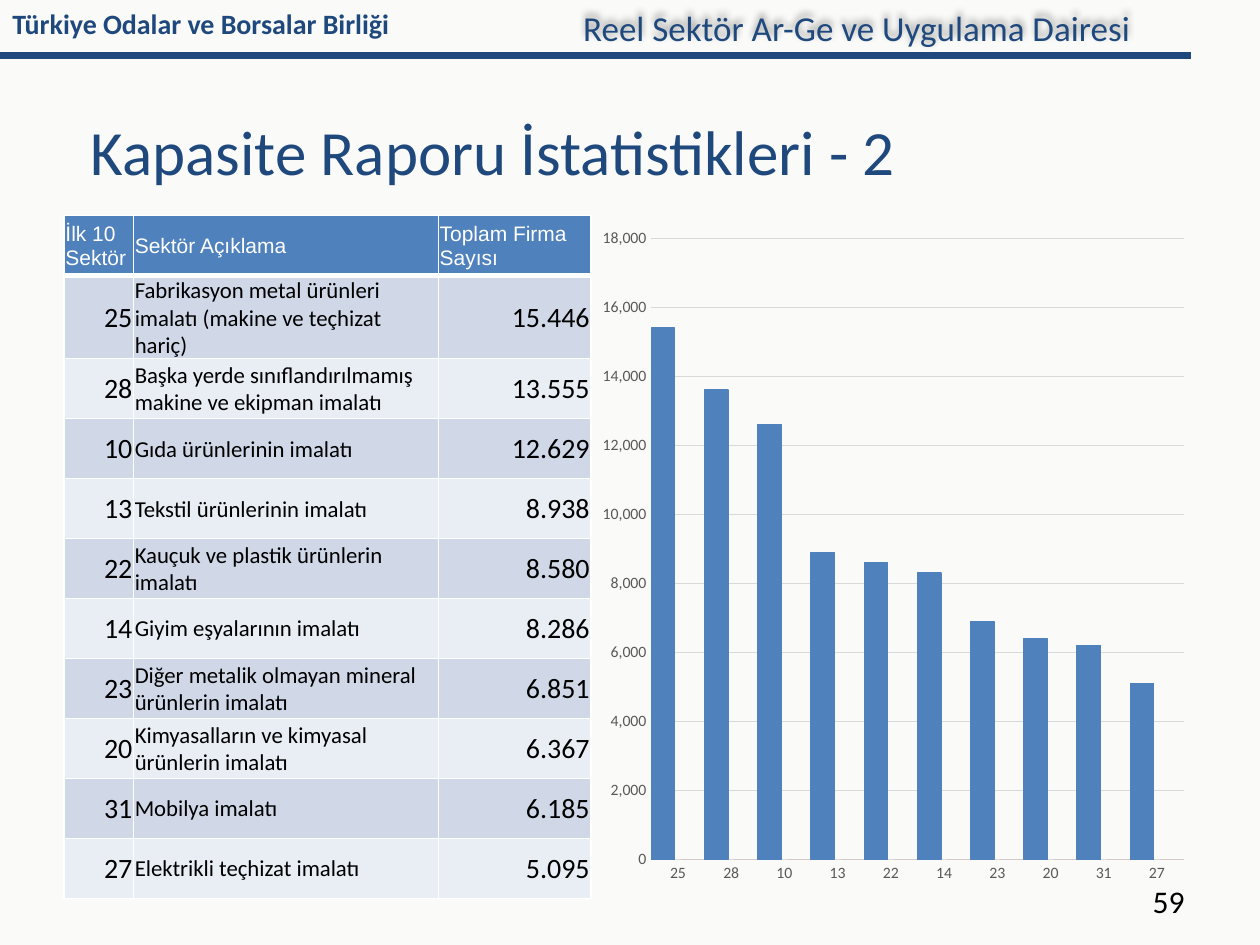
from lxml import etree
from pptx import Presentation
from pptx import util as u
from pptx.chart.data import CategoryChartData
from pptx.dml.color import RGBColor
from pptx.enum import chart as charts, shapes, text
from pptx.oxml import parse_xml
from pptx.oxml.ns import nsdecls, qn

WIDTH, HEIGHT = 10, 7.5
NAVY, BLUE, RED = "1F497D", "4F81BD", "C0504D"
BLACK, WHITE, GREY, RULE = "000000", "FFFFFF", "595959", "D9D9D9"
BANDS = ("D0D8E8", "E9EDF4")
LEFT, TOP, BODY_HEIGHT = 0.51, 1.71, 5.42
COLUMNS = (0.55, 2.42, 1.21)
TALL_ROW = 0.66
RIGHT = text.PP_ALIGN.RIGHT
MIDDLE = text.MSO_ANCHOR.MIDDLE

HEADINGS = ("İlk 10 Sektör", "Sektör Açıklama", "Toplam Firma Sayısı")
SECTORS = (
    ("25", "Fabrikasyon metal ürünleri imalatı (makine ve teçhizat hariç)", "15.446"),
    ("28", "Başka yerde sınıflandırılmamış makine ve ekipman imalatı", "13.555"),
    ("10", "Gıda ürünlerinin imalatı", "12.629"),
    ("13", "Tekstil ürünlerinin imalatı", "8.938"),
    ("22", "Kauçuk ve plastik ürünlerin imalatı", "8.580"),
    ("14", "Giyim eşyalarının imalatı", "8.286"),
    ("23", "Diğer metalik olmayan mineral ürünlerin imalatı", "6.851"),
    ("20", "Kimyasalların ve kimyasal ürünlerin imalatı", "6.367"),
    ("31", "Mobilya imalatı", "6.185"),
    ("27", "Elektrikli teçhizat imalatı", "5.095"),
)


def colour(value):
    return RGBColor.from_string(value)


def paint(fill, value):
    fill.solid()
    fill.fore_color.rgb = colour(value)


def set_all(target, **values):
    for name, value in values.items():
        setattr(target, name, value)


def style_font(font, size, value, name="Calibri", bold=False):
    set_all(font, size=u.Pt(size), name=name, bold=bold)
    font.color.rgb = colour(value)


def style_line(line, value, points):
    line.color.rgb = colour(value)
    line.width = u.Pt(points)


def write(frame, words, size, value, align=None, **font):
    para = frame.paragraphs[0]
    para.alignment = align
    span = para.add_run()
    span.text = words
    style_font(span.font, size, value, **font)


def add_text(page, place, words, size, value, anchor=None, indent=0.1, **style):
    box = page.shapes.add_textbox(*map(u.Inches, place))
    set_all(box.text_frame, word_wrap=True, vertical_anchor=anchor,
            margin_left=u.Inches(indent))
    write(box.text_frame, words, size, value, **style)
    return box


def add_soft_shadow(box):
    box._element.spPr.append(parse_xml(
        f'<a:effectLst {nsdecls("a")}><a:outerShdw blurRad="50800" dist="38100" '
        'dir="16200000"><a:srgbClr val="000000"><a:alpha val="40000"/>'
        '</a:srgbClr></a:outerShdw></a:effectLst>'))


def add_rule(page, y, end):
    rule = page.shapes.add_connector(
        shapes.MSO_CONNECTOR.STRAIGHT, 0, u.Inches(y), u.Inches(end), u.Inches(y))
    style_line(rule.line, NAVY, 4)
    etree.SubElement(rule._element.spPr, qn("a:effectLst"))


def add_borders(cell, bottom):
    properties = cell._tc.get_or_add_tcPr()
    for side, points in (("L", 1), ("R", 1), ("T", 1), ("B", bottom)):
        properties.append(parse_xml(
            f'<a:ln{side} {nsdecls("a")} w="{u.Pt(points)}"><a:solidFill>'
            f'<a:srgbClr val="{WHITE}"/></a:solidFill></a:ln{side}>'))


def fill_cell(cell, words, fill, bottom=1, **style):
    add_borders(cell, bottom)
    paint(cell.fill, fill)
    edge = u.Inches(0.01)
    set_all(cell, vertical_anchor=MIDDLE, margin_left=edge, margin_right=edge,
            margin_top=edge, margin_bottom=0)
    write(cell.text_frame, words, **style)


def add_sector_table(page):
    count = len(SECTORS) + 1
    place = (LEFT, TOP, sum(COLUMNS), BODY_HEIGHT)
    table = page.shapes.add_table(
        count, len(COLUMNS), *map(u.Inches, place)).table
    for column, width in zip(table.columns, COLUMNS):
        column.width = u.Inches(width)
    plain = (BODY_HEIGHT - TALL_ROW) / (count - 1)
    for index, row in enumerate(table.rows):
        row.height = u.Inches(TALL_ROW if index == 1 else plain)

    for column, words in enumerate(HEADINGS):
        fill_cell(table.cell(0, column), words, BLUE, bottom=3,
                  size=12, value=WHITE, name="Arial")
    for index, sector in enumerate(SECTORS):
        for column, words in enumerate(sector):
            size, align = (13, None) if column == 1 else (16, RIGHT)
            fill_cell(table.cell(index + 1, column), words, BANDS[index % 2],
                      size=size, value=BLACK, align=align)


def add_firm_chart(page):
    data = CategoryChartData(number_format="#,##0")
    data.categories = [code for code, _, _ in SECTORS]
    data.add_series("Series 1", [round(int(firms.replace(".", "")), -2)
                                 for _, _, firms in SECTORS])
    data.add_series("Series 2", [0] * len(SECTORS))
    place = (LEFT + sum(COLUMNS), TOP, 4.8, BODY_HEIGHT)
    chart = page.shapes.add_chart(
        charts.XL_CHART_TYPE.COLUMN_CLUSTERED, *map(u.Inches, place), data).chart
    set_all(chart, has_legend=False, has_title=False)
    style_font(chart.font, 10, BLACK)

    # Bars
    plot = chart.plots[0]
    set_all(plot, gap_width=0, overlap=-27, vary_by_categories=False)
    firms, second = plot.series
    paint(firms.format.fill, BLUE)
    style_line(firms.format.line, BLUE, 0.75)
    paint(second.format.fill, RED)

    # Axes
    for axis in (chart.category_axis, chart.value_axis):
        set_all(axis, major_tick_mark=charts.XL_TICK_MARK.NONE,
                minor_tick_mark=charts.XL_TICK_MARK.NONE)
        style_font(axis.tick_labels.font, 9, GREY)
    values = chart.value_axis
    set_all(values, minimum_scale=0, maximum_scale=18000, major_unit=2000)
    set_all(values.tick_labels, number_format="#,##0", number_format_is_linked=False)
    values.format.line.fill.background()
    for line in (chart.category_axis.format.line, values.major_gridlines.format.line):
        style_line(line, RULE, 0.75)

    # Plot area as shares of the chart
    area = chart._chartSpace.chart.plotArea
    for old in area.findall(qn("c:layout")):
        area.remove(old)
    shares = "".join(f'<c:{key} val="{share}"/>' for key, share in
                     (("x", 0.1), ("y", 1 / 30), ("w", 0.88), ("h", 0.91)))
    area.insert(0, parse_xml(
        f'<c:layout {nsdecls("c")}><c:manualLayout><c:layoutTarget val="inner"/>'
        f'<c:xMode val="edge"/><c:yMode val="edge"/>{shares}'
        '</c:manualLayout></c:layout>'))


def main():
    deck = Presentation()
    deck.slide_width, deck.slide_height = u.Inches(WIDTH), u.Inches(HEIGHT)
    page = deck.slides.add_slide(deck.slide_layouts[6])
    paint(page.background.fill, "FAFAF9")

    # Header band
    add_rule(page, 0.44, 9.45)
    add_text(page, (0, 0, 8.15, 0.37), "Türkiye Odalar ve Borsalar Birliği",
             16, NAVY, bold=True)
    department = add_text(page, (4.53, 0, 6.18, 0.44),
                          "Reel Sektör Ar-Ge ve Uygulama Dairesi", 20, NAVY)
    add_soft_shadow(department)

    # Title and body
    add_text(page, (LEFT, 0.68, 9, 1.03), "Kapasite Raporu İstatistikleri - 2",
             36, NAVY, anchor=MIDDLE, indent=0.21)
    add_sector_table(page)
    add_firm_chart(page)

    # Page number
    add_text(page, (7.17, 6.95, 2.33, 0.4), "59", 18, BLACK, align=RIGHT)
    deck.save("out.pptx")


if __name__ == "__main__":
    main()
